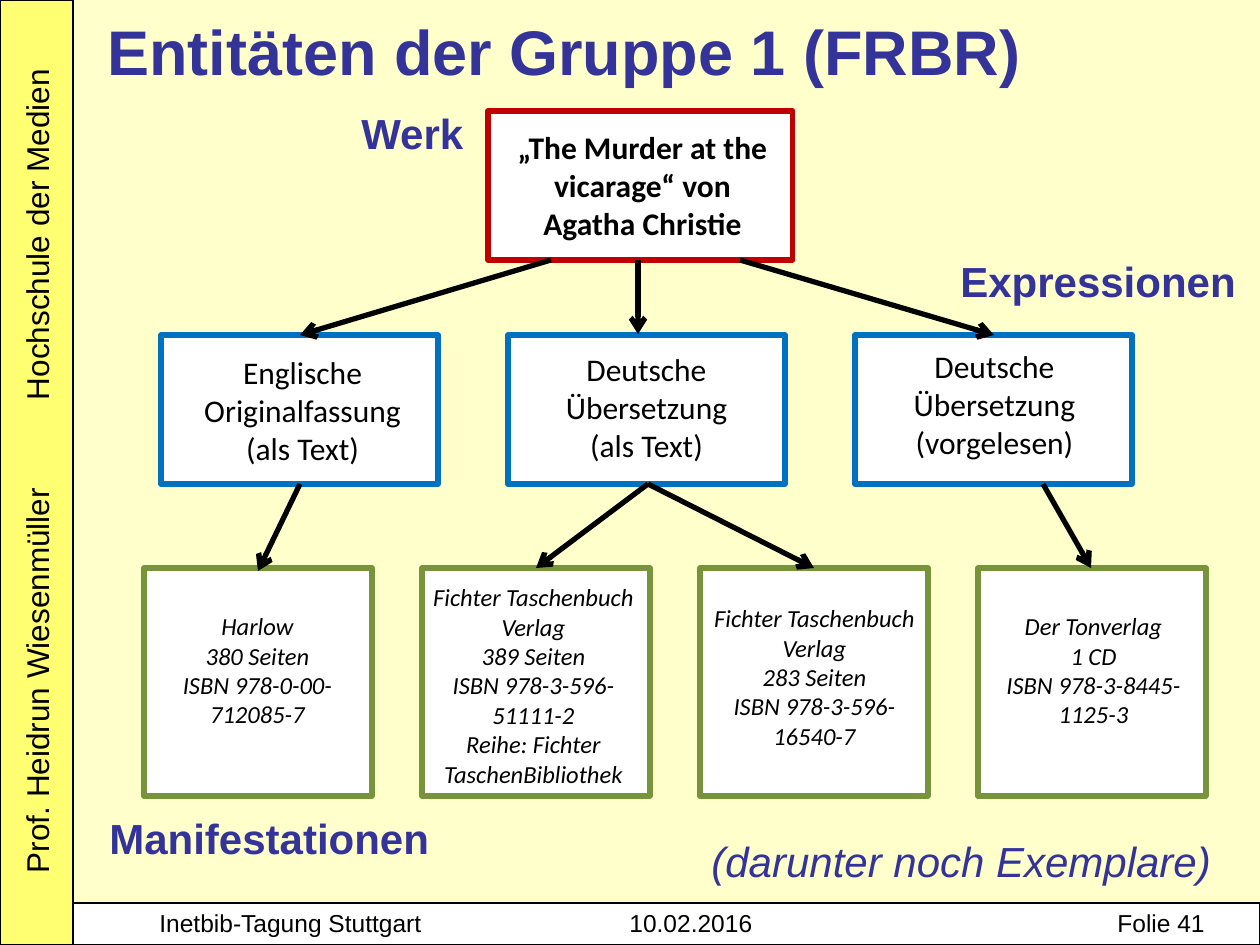
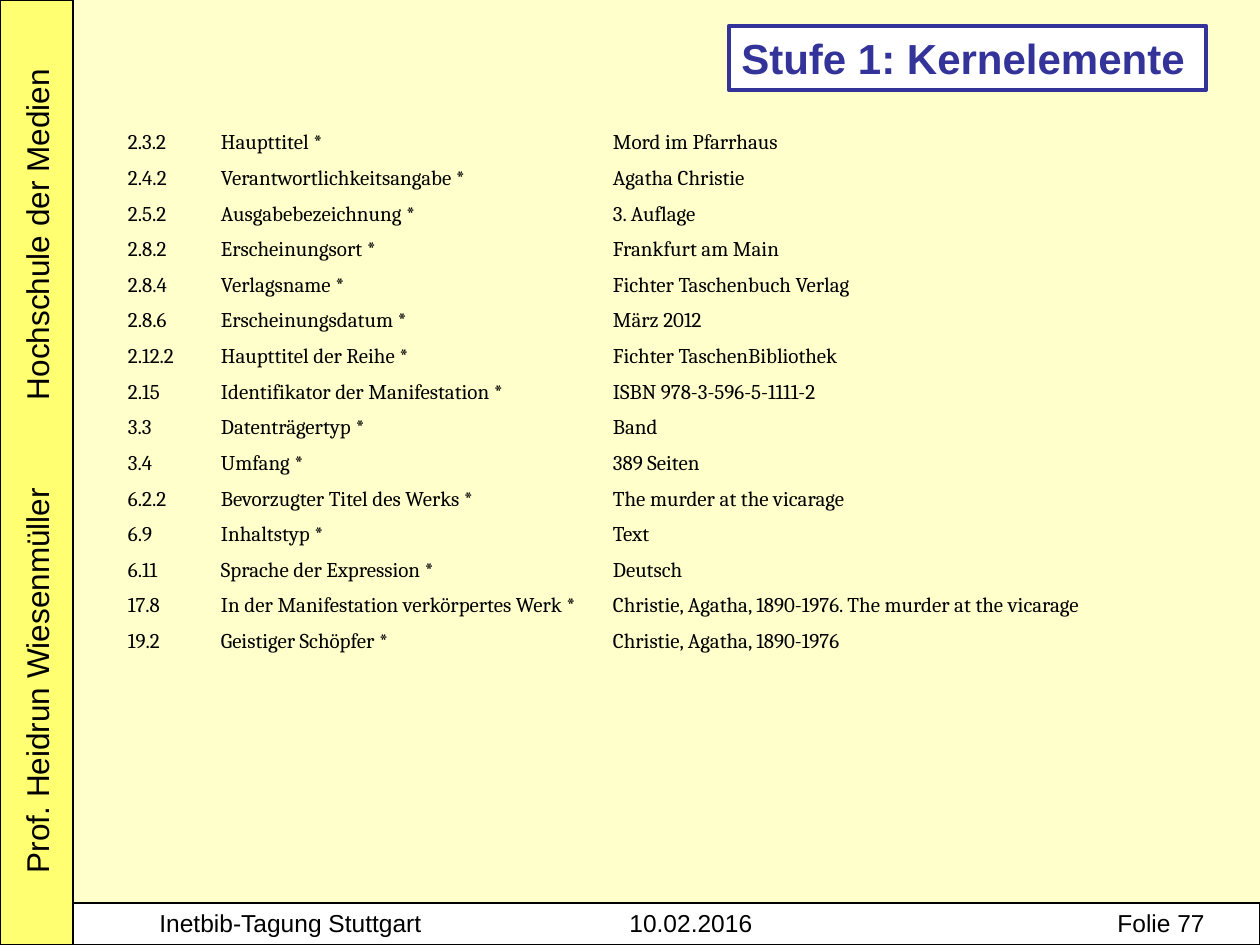
from dataclasses import dataclass

from lxml.etree import SubElement
from pptx import Presentation
from pptx.dml.color import RGBColor
from pptx.enum.shapes import MSO_CONNECTOR, MSO_SHAPE
from pptx.enum.text import MSO_ANCHOR, MSO_AUTO_SIZE, PP_ALIGN
from pptx.oxml.ns import qn
from pptx.util import Pt

EMU_PER_PX = 914400 / 126
PAGE_WIDTH, PAGE_HEIGHT = 1260, 945
SIDEBAR_WIDTH = 73
FOOTER_TOP = 903
PLAIN_TABLE_STYLE = "{2D5ABB26-0587-4C30-8999-92F81FD0307C}"


@dataclass(frozen=True)
class TextStyle:
    font: str
    size: int
    color: str = "000000"
    bold: bool = False
    italic: bool = False


@dataclass(frozen=True)
class Theme:
    paper: str = "FFFFCC"
    sidebar: str = "FFFF66"
    white: str = "FFFFFF"
    ink: str = "000000"
    accent: str = "333399"
    work: str = "C00000"
    expression: str = "0070C0"
    manifestation: str = "77933C"
    title: TextStyle = TextStyle("Arial", 36, "333399", bold=True)
    heading: TextStyle = TextStyle("Arial", 24, "333399", bold=True)
    remark: TextStyle = TextStyle("Arial", 24, "333399", italic=True)
    side: TextStyle = TextStyle("Arial", 18)
    footer: TextStyle = TextStyle("Arial", 14)
    work_text: TextStyle = TextStyle("Calibri", 18, bold=True)
    expression_text: TextStyle = TextStyle("Calibri", 18)
    manifestation_text: TextStyle = TextStyle("Calibri", 14, italic=True)
    table: TextStyle = TextStyle("Cambria", 12)


THEME = Theme()

# left, top, width, height of the label, then its lines
EXPRESSIONS = [
    ((186, 347, 233, 127), ["Englische", "Originalfassung", "(als Text)"]),
    ((530, 344, 233, 127), ["Deutsche Übersetzung (als Text)"]),
    ((878, 341, 233, 127), ["Deutsche Übersetzung", "(vorgelesen)"]),
]
MANIFESTATIONS = [
    ((166, 605, 183, 131), ["Harlow", "380 Seiten", "ISBN 978-0-00-712085-7"]),
    ((408, 576, 251, 220), ["Fichter Taschenbuch Verlag", "389 Seiten",
                            "ISBN 978-3-596-51111-2",
                            "Reihe: Fichter TaschenBibliothek"]),
    ((689, 597, 251, 161), ["Fichter Taschenbuch Verlag", "283 Seiten",
                            "ISBN 978-3-596-16540-7"]),
    ((968, 605, 251, 131), ["Der Tonverlag", "1 CD", "ISBN 978-3-8445-1125-3"]),
]
ARROWS = [
    (638, 260, 638, 334), (551, 260, 300, 335), (740, 260, 994, 335),
    (300, 484, 258, 571), (648, 484, 536, 568), (648, 484, 814, 568),
    (1043, 484, 1091, 568),
]
CORE_ELEMENTS = [
    ("2.3.2", "Haupttitel *", "Mord im Pfarrhaus"),
    ("2.4.2", "Verantwortlichkeitsangabe *", "Agatha Christie"),
    ("2.5.2", "Ausgabebezeichnung *", "3. Auflage"),
    ("2.8.2", "Erscheinungsort *", "Frankfurt am Main"),
    ("2.8.4", "Verlagsname *", "Fichter Taschenbuch Verlag"),
    ("2.8.6", "Erscheinungsdatum *", "März 2012"),
    ("2.12.2", "Haupttitel der Reihe *", "Fichter TaschenBibliothek"),
    ("2.15", "Identifikator der Manifestation *", "ISBN 978-3-596-5-1111-2"),
    ("3.3", "Datenträgertyp *", "Band"),
    ("3.4", "Umfang *", "389 Seiten"),
    ("6.2.2", "Bevorzugter Titel des Werks *", "The murder at the vicarage"),
    ("6.9", "Inhaltstyp *", "Text"),
    ("6.11", "Sprache der Expression *", "Deutsch"),
    ("17.8", "In der Manifestation verkörpertes Werk *",
     "Christie, Agatha, 1890-1976. The murder at the vicarage"),
    ("19.2", "Geistiger Schöpfer *", "Christie, Agatha, 1890-1976"),
]


def px(length):
    return round(length * EMU_PER_PX)


def place(area):
    return [px(length) for length in area]


def rgb(color):
    return RGBColor.from_string(color)


def write(frame, lines, style, align=PP_ALIGN.LEFT, tabs=(), spacing=None):
    """Fill a text frame with one paragraph per line; tabs are px stops."""
    frame.word_wrap = True
    for index, line in enumerate(lines):
        para = frame.paragraphs[0] if index == 0 else frame.add_paragraph()
        para.alignment = align
        if spacing:
            para.line_spacing = spacing
        if tabs:
            stops = SubElement(para._p.get_or_add_pPr(), qn("a:tabLst"))
            for stop in tabs:
                SubElement(stops, qn("a:tab"), pos=str(px(stop)), algn="l")
        span = para.add_run()
        span.text = line
        font = span.font
        font.name, font.size = style.font, Pt(style.size)
        font.bold, font.italic = style.bold, style.italic
        font.color.rgb = rgb(style.color)


def add_text(page, area, lines, style, **layout):
    box = page.shapes.add_textbox(*place(area))
    write(box.text_frame, lines, style, **layout)
    box.text_frame.auto_size = MSO_AUTO_SIZE.SHAPE_TO_FIT_TEXT
    return box


def add_box(page, area, fill, line, weight):
    box = page.shapes.add_shape(MSO_SHAPE.RECTANGLE, *place(area))
    box.shadow.inherit = False
    box.fill.solid()
    box.fill.fore_color.rgb = rgb(fill)
    box.line.color.rgb = rgb(line)
    box.line.width = Pt(weight)
    return box


def add_entity(page, area, line, label_area, lines, style):
    """Draw a framed entity with its centred label."""
    add_box(page, area, THEME.white, line, 3)
    add_text(page, label_area, lines, style, align=PP_ALIGN.CENTER)


def add_arrow(page, ends):
    arrow = page.shapes.add_connector(MSO_CONNECTOR.STRAIGHT, *place(ends))
    arrow.line.color.rgb = rgb(THEME.ink)
    arrow.line.width = Pt(3)
    properties = arrow._element.spPr
    SubElement(properties.find(qn("a:ln")), qn("a:tailEnd"), type="arrow")
    SubElement(properties, qn("a:effectLst"))


def add_table(page, area, widths, rows):
    left, top, width, height = place(area)
    frame = page.shapes.add_table(len(rows), len(widths), left, top, width, height)
    table = frame.table
    table.first_row = table.horz_banding = False
    table._tbl.tblPr.find(qn("a:tableStyleId")).text = PLAIN_TABLE_STYLE
    for column, column_width in zip(table.columns, widths):
        column.width = px(column_width)
    for row, texts in zip(table.rows, rows):
        row.height = height // len(rows)
        for cell, text in zip(row.cells, texts):
            cell.fill.background()
            cell.margin_left = cell.margin_right = px(5)
            cell.margin_top = cell.margin_bottom = px(5)
            write(cell.text_frame, [text], THEME.table)


def add_page(deck, number):
    """Add a blank page with the sidebar and the footer."""
    page = deck.slides.add_slide(deck.slide_layouts[6])
    page.background.fill.solid()
    page.background.fill.fore_color.rgb = rgb(THEME.paper)
    sidebar = add_box(page, (0, 0, SIDEBAR_WIDTH, PAGE_HEIGHT),
                      THEME.sidebar, THEME.ink, 0.75)
    color = sidebar._element.spPr.find(qn("a:solidFill")).find(qn("a:srgbClr"))
    SubElement(color, qn("a:alpha"), val="89000")
    add_box(page, (SIDEBAR_WIDTH, FOOTER_TOP, PAGE_WIDTH - SIDEBAR_WIDTH,
                   PAGE_HEIGHT - FOOTER_TOP), THEME.white, THEME.ink, 0.75)
    author = add_text(page, (-387, 437, 847, 50),
                      ["Prof. Heidrun Wiesenmüller\tHochschule der Medien"],
                      THEME.side, tabs=[473])
    author.rotation = 270
    add_text(page, (147, 902, 1092, 43),
             [f"Inetbib-Tagung Stuttgart\t10.02.2016\tFolie {number}"],
             THEME.footer, tabs=[470, 958])
    return page


def add_entities_page(deck):
    page = add_page(deck, 41)
    add_entity(page, (488, 111, 305, 149), THEME.work, (504, 122, 277, 127),
               ["„The Murder at the vicarage“ von Agatha Christie"],
               THEME.work_text)
    for index, (label_area, lines) in enumerate(EXPRESSIONS):
        add_entity(page, (161 + 347 * index, 335, 277, 149), THEME.expression,
                   label_area, lines, THEME.expression_text)
    for index, (label_area, lines) in enumerate(MANIFESTATIONS):
        add_entity(page, (144 + 278 * index, 568, 228, 228), THEME.manifestation,
                   label_area, lines, THEME.manifestation_text)
    for ends in ARROWS:
        add_arrow(page, ends)
    add_text(page, (349, 101, 136, 63), ["Werk"], THEME.heading)
    add_text(page, (948, 249, 308, 63), ["Expressionen"], THEME.heading)
    add_text(page, (97, 806, 364, 63), ["Manifestationen"], THEME.heading)
    add_text(page, (95, -5, 1160, 101), ["Entitäten der Gruppe 1 (FRBR)"],
             THEME.title, spacing=1.15)
    add_text(page, (699, 829, 550, 63), ["(darunter noch Exemplare)"],
             THEME.remark)


def add_core_elements_page(deck):
    page = add_page(deck, 77)
    add_table(page, (123, 126, 1082, 535), [93, 392, 597], CORE_ELEMENTS)
    title = add_box(page, (729, 26, 477, 64), THEME.white, THEME.accent, 2.5)
    title.text_frame.vertical_anchor = MSO_ANCHOR.TOP
    write(title.text_frame, ["Stufe 1: Kernelemente"], THEME.heading)


def main():
    deck = Presentation()
    deck.slide_width, deck.slide_height = px(PAGE_WIDTH), px(PAGE_HEIGHT)
    add_entities_page(deck)
    add_core_elements_page(deck)
    deck.save("out.pptx")


if __name__ == "__main__":
    main()
